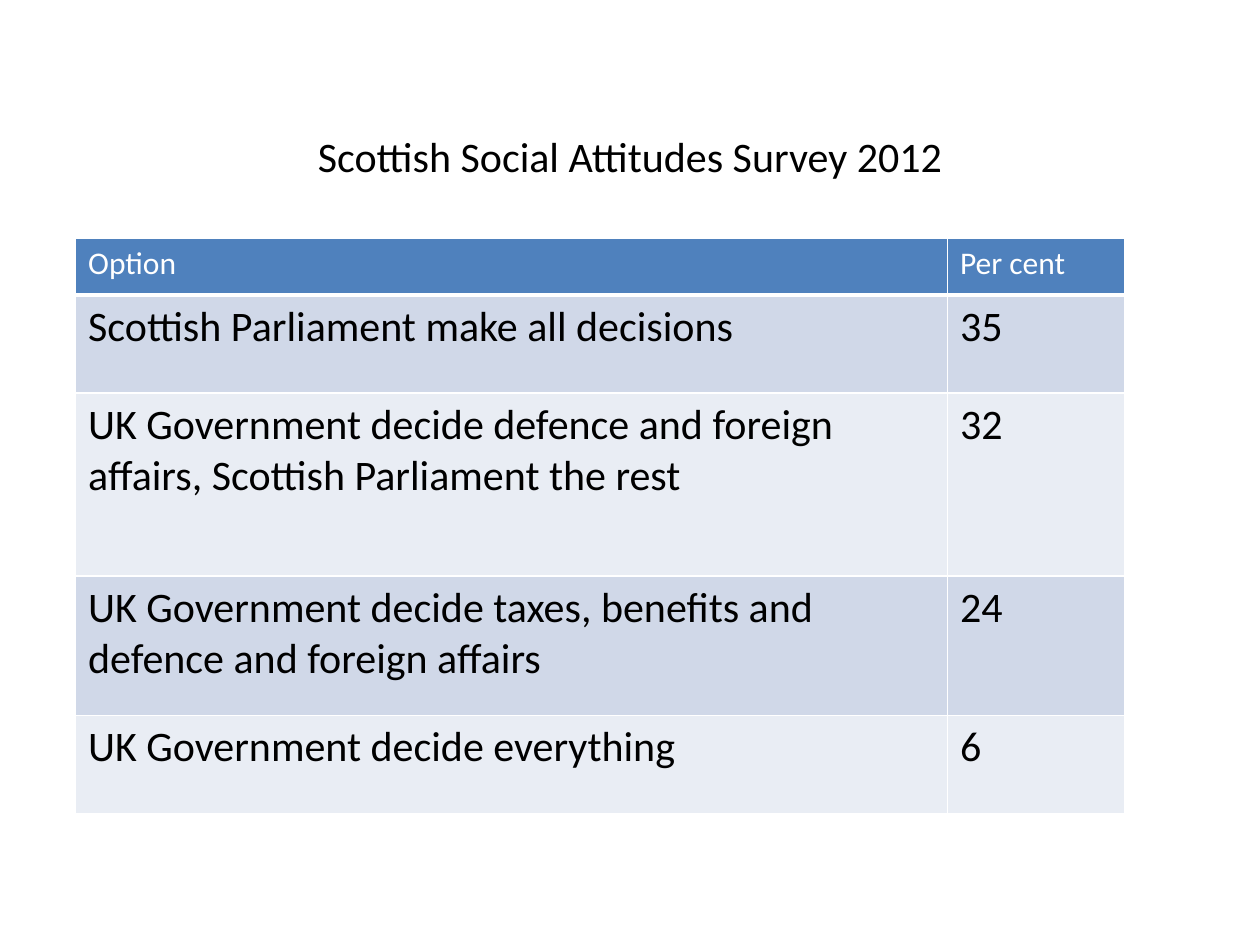
from lxml.etree import SubElement
from pptx import Presentation
from pptx.dml.color import RGBColor
from pptx.enum.text import MSO_ANCHOR, PP_ALIGN
from pptx.oxml.ns import qn
from pptx.util import Inches, Pt

FONT = "Calibri"
BLACK, WHITE, HEADER_BLUE = "000000", "FFFFFF", "4F81BD"
BANDS = ["D0D8E8", "E9EDF4"]

SURVEY = [
    ("Option", "Per cent"),
    ("Scottish Parliament make all decisions", "35"),
    ("UK Government decide defence and foreign affairs, "
     "Scottish Parliament the rest", "32"),
    ("UK Government decide taxes, benefits and defence and foreign affairs", "24"),
    ("UK Government decide everything", "6"),
]
COLUMN_WIDTHS = [6.92, 1.41]
ROW_HEIGHTS = [0.45, 0.78, 1.45, 1.11, 0.78]


def color(hex_code):
    return RGBColor.from_string(hex_code)


def add_run(paragraph, text, size, hex_code):
    run = paragraph.add_run()
    run.text = text
    run.font.name = FONT
    run.font.size = Pt(size)
    run.font.bold = False
    run.font.color.rgb = color(hex_code)


def add_borders(cell, bottom):
    properties = cell._tc.get_or_add_tcPr()
    for side, width in (("L", 1), ("R", 1), ("T", 1), ("B", bottom)):
        line = SubElement(properties, qn(f"a:ln{side}"), w=str(Pt(width)))
        fill = SubElement(line, qn("a:solidFill"))
        SubElement(fill, qn("a:srgbClr"), val=WHITE)


def place_title(slide, left, top, width, height):
    title = slide.shapes.title
    title.left, title.top = Inches(left), Inches(top)
    title.width, title.height = Inches(width), Inches(height)
    title.text_frame.vertical_anchor = MSO_ANCHOR.MIDDLE
    heading = title.text_frame.paragraphs[0]
    heading.alignment = PP_ALIGN.CENTER
    add_run(heading, "Scottish Social Attitudes Survey 2012", 24, BLACK)


def place_survey_table(slide, left, top, width, height):
    table = slide.shapes.add_table(
        len(SURVEY), len(COLUMN_WIDTHS),
        Inches(left), Inches(top), Inches(width), Inches(height)).table
    for column, column_width in zip(table.columns, COLUMN_WIDTHS):
        column.width = Inches(column_width)
    for row, row_height in zip(table.rows, ROW_HEIGHTS):
        row.height = Inches(row_height)

    for r, answers in enumerate(SURVEY):
        # Header row first, then alternating bands
        if r == 0:
            background, size, ink, bottom = HEADER_BLUE, 18, WHITE, 3
        else:
            background, size, ink, bottom = BANDS[(r - 1) % 2], 24, BLACK, 1
        for c, answer in enumerate(answers):
            cell = table.cell(r, c)
            add_borders(cell, bottom)
            cell.fill.solid()
            cell.fill.fore_color.rgb = color(background)
            add_run(cell.text_frame.paragraphs[0], answer, size, ink)


def main():
    prs = Presentation()
    prs.slide_width, prs.slide_height = Inches(10), Inches(7.5)
    slide = prs.slides.add_slide(prs.slide_layouts[5])
    place_title(slide, 0.6, 0.69, 8.8, 1.09)
    place_survey_table(slide, 0.6, 1.89, sum(COLUMN_WIDTHS), sum(ROW_HEIGHTS))
    prs.save("out.pptx")


if __name__ == "__main__":
    main()
